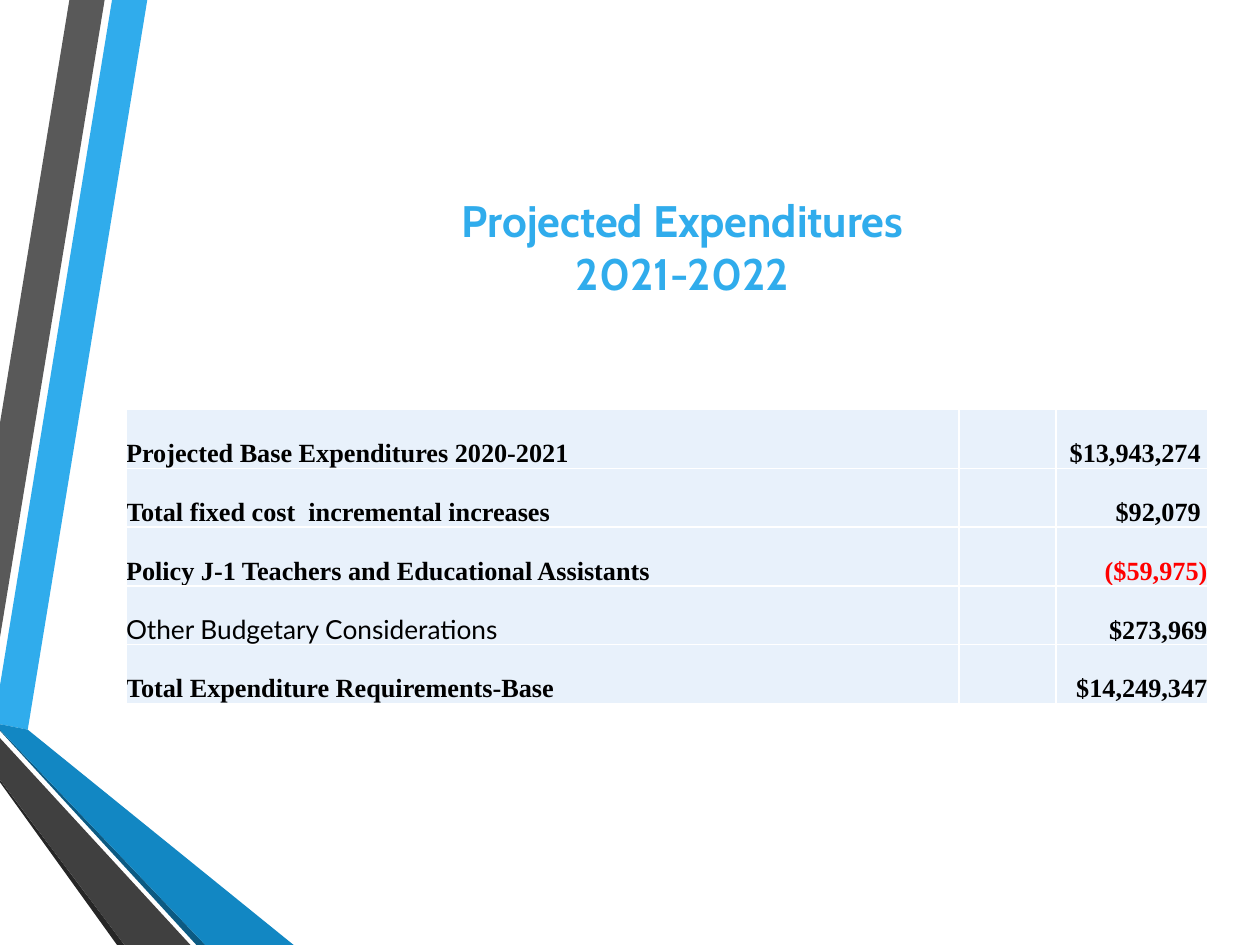
from dataclasses import dataclass
from typing import Any

from pptx import Presentation
from pptx.dml.color import RGBColor
from pptx.enum.text import MSO_ANCHOR as Anchor, PP_ALIGN as Align
from pptx.oxml import parse_xml
from pptx.oxml.ns import nsdecls
from pptx.util import Cm, Pt

BLUE, BLACK, RED, WHITE, PALE = "30ACEC", "000000", "FF0000", "FFFFFF", "E8F1FB"


def color(code):
    return RGBColor.from_string(code)


@dataclass
class SlideBuilder:
    page: Any
    title_font: str = "Cabin"
    table_font: str = "Times New Roman"
    title_size: float = 25.2
    table_size: float = 15

    def band(self, fill, points):
        corners = [(Cm(x), Cm(y)) for x, y in points]
        outline = self.page.shapes.build_freeform(*corners[0])
        outline.add_line_segments(corners[1:], close=True)
        shape = outline.convert_to_shape()
        shape.shadow.inherit = False
        shape.fill.solid()
        shape.fill.fore_color.rgb = color(fill)
        shape.line.fill.background()

    def span(self, para, text, font, size, ink, bold=True):
        span = para.add_run()
        span.text = text
        span.font.name = font
        span.font.size = Pt(size)
        span.font.bold = bold
        span.font.color.rgb = color(ink)

    def title(self, lines, left, top, width, height, lift):
        box = self.page.shapes.add_textbox(Cm(left), Cm(top), Cm(width), Cm(height))
        frame = box.text_frame
        frame.word_wrap = True
        frame.vertical_anchor = Anchor.MIDDLE
        frame.margin_bottom = Cm(lift)
        para = frame.paragraphs[0]
        para.alignment = Align.CENTER
        for number, line in enumerate(lines):
            if number:
                para.add_line_break()
            self.span(para, line, self.title_font, self.title_size, BLUE)

    def cell(self, cell):
        props = cell._tc.get_or_add_tcPr()
        for side in "LRTB":
            props.append(parse_xml(
                f'<a:ln{side} {nsdecls("a")} w="{Pt(1)}"><a:solidFill>'
                f'<a:srgbClr val="{WHITE}"/></a:solidFill></a:ln{side}>'))
        cell.fill.solid()
        cell.fill.fore_color.rgb = color(PALE)

    def cell_text(self, cell, text, align, font=None, ink=BLACK, bold=True):
        cell.vertical_anchor = Anchor.BOTTOM
        cell.margin_left = cell.margin_right = cell.margin_top = cell.margin_bottom = 0
        para = cell.text_frame.paragraphs[0]
        para.alignment = align
        self.span(para, text, font or self.table_font, self.table_size, ink, bold)

    def table(self, rows, left, top, widths, height):
        table = self.page.shapes.add_table(
            len(rows), len(widths), Cm(left), Cm(top), Cm(sum(widths)), Cm(height)).table
        table.first_row = table.horz_banding = False
        for column, width in zip(table.columns, widths):
            column.width = Cm(width)
        for cell in table.iter_cells():
            self.cell(cell)
        for number, (label, amount, label_style, amount_style) in enumerate(rows):
            self.cell_text(table.cell(number, 0), label, Align.JUSTIFY, **label_style)
            self.cell_text(table.cell(number, 2), amount, Align.RIGHT, **amount_style)


def main():
    deck = Presentation()
    deck.slide_width, deck.slide_height = Cm(25.4), Cm(19.05)
    slide = SlideBuilder(deck.slides.add_slide(deck.slide_layouts[6]))

    # Folded ribbons along the left edge
    bottom = 19.05
    slide.band(BLUE, [(0, 13.82), (0, 14.6), (0.56, 14.71), (2.97, 0), (2.26, 0)])
    slide.band("595959", [(2.11, 0), (1.4, 0), (0, 8.53), (0, 12.85)])
    slide.band("262626", [(0, 15.72), (0, 15.77), (2.36, bottom), (2.51, bottom)])
    slide.band("0C5A82", [(0, 14.71), (0, 14.73), (3.96, bottom), (4.14, bottom)])
    slide.band("1287C3", [(0, 14.71), (4.14, bottom), (5.92, bottom),
                          (0.56, 14.71), (0, 14.6)])
    slide.band("404040", [(0, 15.72), (2.51, bottom), (3.84, bottom), (0, 14.88)])

    # Title, lifted by one line within its box
    slide.title(["Projected Expenditures", "2021-2022"], 3.18, 4.45, 21.16, 2.11, lift=1.2)

    # Expenditure table
    rows = [
        ("Projected Base Expenditures 2020-2021", "$13,943,274 ", {}, {}),
        ("Total fixed cost  incremental increases ", "$92,079 ", {}, {}),
        ("Policy J-1 Teachers and Educational Assistants", "($59,975)", {}, {"ink": RED}),
        ("Other Budgetary Considerations", "$273,969", {"font": "Lato", "bold": False}, {}),
        ("Total Expenditure Requirements-Base", "$14,249,347", {}, {}),
    ]
    slide.table(rows, 2.54, 8.26, [16.79, 1.96, 3.05], 5.92)

    deck.save("out.pptx")


if __name__ == "__main__":
    main()
